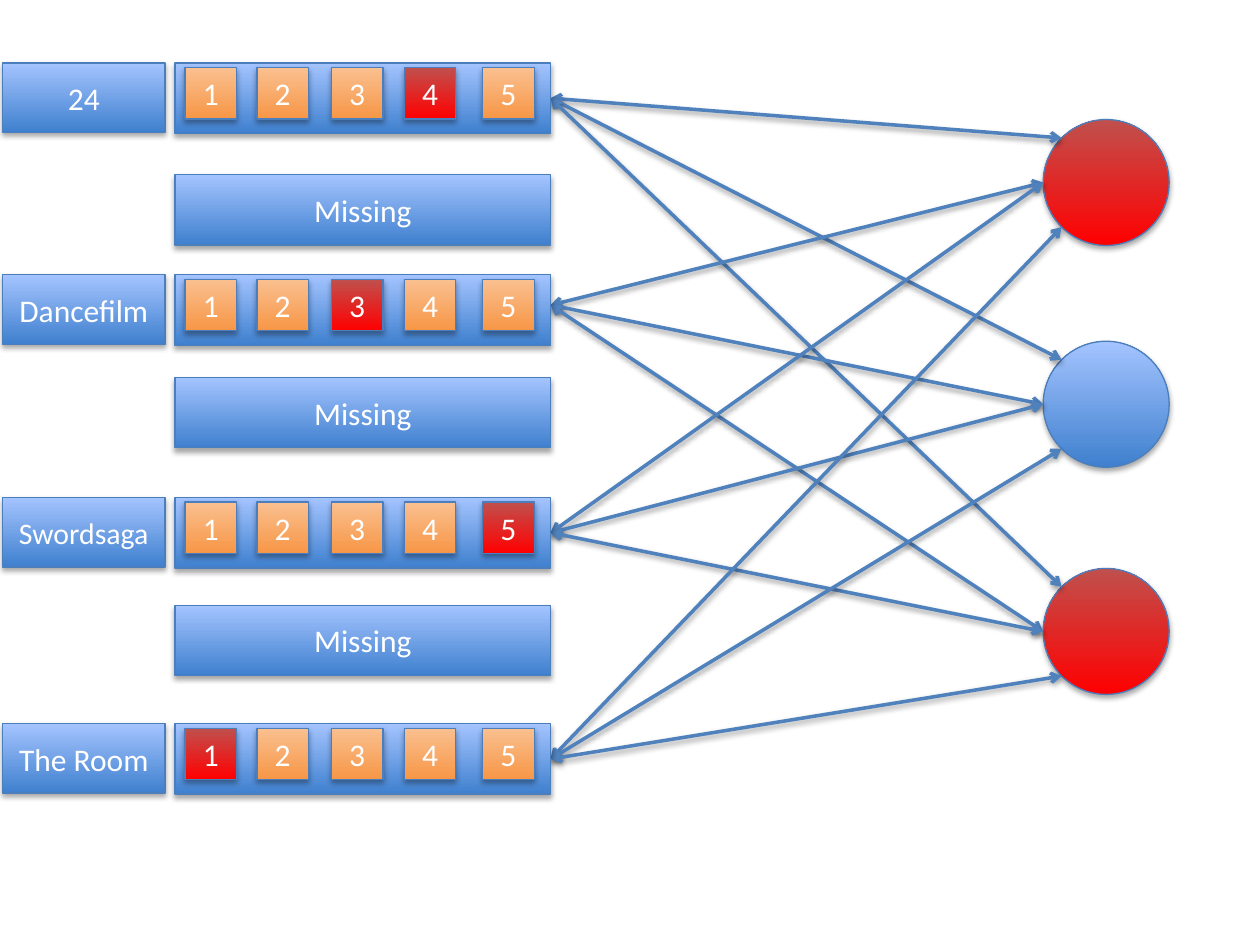
from dataclasses import dataclass
from math import cos, pi, sin

from lxml.etree import SubElement
from pptx import Presentation
from pptx.dml.color import RGBColor
from pptx.enum.shapes import MSO_CONNECTOR, MSO_SHAPE
from pptx.enum.text import MSO_ANCHOR, PP_ALIGN
from pptx.oxml.ns import qn
from pptx.util import Cm, Pt


@dataclass(frozen=True)
class Theme:
    # Gradients run from the bottom colour to the top colour.
    blue: tuple = ("3F80CE", "A4C4FF")
    orange: tuple = ("F79646", "FAC090")
    red: tuple = ("FF0000", "C0504D")
    outline: str = "4B7EBC"
    arrow: str = "4F81BD"
    text: str = "FFFFFF"
    font: str = "Calibri"
    text_size: int = 18
    small_size: int = 17


theme = Theme()


def add_block(left, top, width, height, gradient, kind=MSO_SHAPE.RECTANGLE,
              text="", size=theme.text_size):
    """Add a gradient shape in centimetres that keeps the theme's soft shadow."""
    shape = slide.shapes.add_shape(kind, Cm(left), Cm(top), Cm(width), Cm(height))
    shape.fill.gradient()
    shape.fill.gradient_angle = 90
    for stop, color in zip(shape.fill.gradient_stops, gradient):
        stop.color.rgb = RGBColor.from_string(color)
    shape.line.color.rgb = RGBColor.from_string(theme.outline)
    shape.line.width = Pt(0.75)
    if text:
        frame = shape.text_frame
        frame.word_wrap = True
        frame.vertical_anchor = MSO_ANCHOR.MIDDLE
        paragraph = frame.paragraphs[0]
        paragraph.text = text
        paragraph.alignment = PP_ALIGN.CENTER
        paragraph.font.name = theme.font
        paragraph.font.size = Pt(size)
        paragraph.font.color.rgb = RGBColor.from_string(theme.text)


def add_double_arrow(start_x, start_y, end_x, end_y):
    connector = slide.shapes.add_connector(
        MSO_CONNECTOR.STRAIGHT, Cm(start_x), Cm(start_y), Cm(end_x), Cm(end_y))
    connector.line.color.rgb = RGBColor.from_string(theme.arrow)
    connector.line.width = Pt(2)
    line = connector.line._get_or_add_ln()
    for end in ("a:headEnd", "a:tailEnd"):
        SubElement(line, qn(end), type="arrow")


presentation = Presentation()
presentation.slide_width = Cm(25.4)
presentation.slide_height = Cm(19.05)
slide = presentation.slides.add_slide(presentation.slide_layouts[6])

bar_left, bar_width, bar_height = 3.53, 7.57, 1.42
square_lefts = (3.73, 5.18, 6.68, 8.15, 9.73)
square_size, square_inset = 1.04, 0.09
radius = 1.27
unit_center_x = 22.3

# Title, type size, top of row, height where arrows meet, chosen rating,
# angle at which arrows touch the hidden units
rated_rows = (
    ("24", theme.text_size, 1.27, 1.98, 4, -3 * pi / 4),
    ("Dancefilm", theme.text_size, 5.54, 6.15, 3, pi),
    ("Swordsaga", theme.small_size, 10.03, 10.74, 5, pi),
    ("The Room", theme.text_size, 14.59, 15.3, 1, 3 * pi / 4),
)
missing_tops = (3.52, 7.61, 12.2)
hidden_units = ((3.68, theme.red), (8.15, theme.blue), (12.73, theme.red))

for center_y, gradient in hidden_units:
    add_block(unit_center_x - radius, center_y - radius, 2 * radius, 2 * radius,
              gradient, kind=MSO_SHAPE.OVAL)

for title, size, top, arrow_y, rating, angle in rated_rows:
    for center_y, gradient in hidden_units:
        add_double_arrow(bar_left + bar_width, arrow_y,
                         unit_center_x + radius * cos(angle),
                         center_y + radius * sin(angle))

for title, size, top, arrow_y, rating, angle in rated_rows:
    add_block(bar_left, top, bar_width, bar_height, theme.blue)
    for number, left in enumerate(square_lefts, start=1):
        add_block(left, top + square_inset, square_size, square_size,
                  theme.red if number == rating else theme.orange, text=str(number))
    add_block(0.05, top, 3.28, 1.4, theme.blue, text=title, size=size)

for top in missing_tops:
    add_block(bar_left, top, bar_width, bar_height, theme.blue, text="Missing")

presentation.save("out.pptx")
